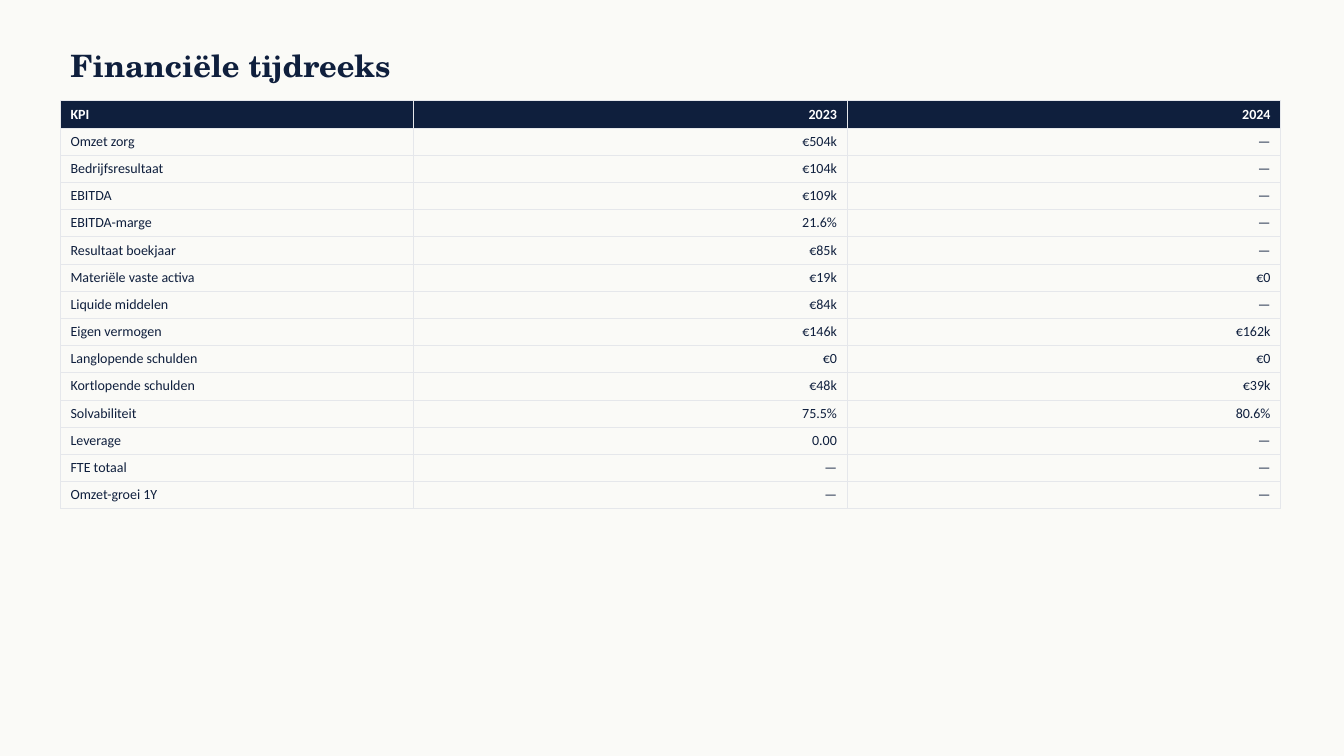
from dataclasses import dataclass

from lxml import etree
from pptx import Presentation
from pptx.dml.color import RGBColor
from pptx.enum.text import MSO_ANCHOR, PP_ALIGN
from pptx.oxml.ns import qn
from pptx.util import Inches, Pt

LEFT, RIGHT = PP_ALIGN.LEFT, PP_ALIGN.RIGHT
MIDDLE = MSO_ANCHOR.MIDDLE


@dataclass(frozen=True)
class Theme:
    paper: str = "FAFAF7"
    navy: str = "0F1F3D"
    white: str = "FFFFFF"
    rule: str = "E5E7EB"
    title_font: str = "TeX Gyre Schola"
    body_font: str = "Calibri"
    title_size: float = 22
    body_size: float = 10
    rule_width: float = 0.5


THEME = Theme()
COLUMN_WIDTHS = (3.5, 4.3, 4.3)
ROW_HEIGHT = 0.27
KPI_ROWS = (
    ("KPI", "2023", "2024"),
    ("Omzet zorg", "€504k", "—"),
    ("Bedrijfsresultaat", "€104k", "—"),
    ("EBITDA", "€109k", "—"),
    ("EBITDA-marge", "21.6%", "—"),
    ("Resultaat boekjaar", "€85k", "—"),
    ("Materiële vaste activa", "€19k", "€0"),
    ("Liquide middelen", "€84k", "—"),
    ("Eigen vermogen", "€146k", "€162k"),
    ("Langlopende schulden", "€0", "€0"),
    ("Kortlopende schulden", "€48k", "€39k"),
    ("Solvabiliteit", "75.5%", "80.6%"),
    ("Leverage", "0.00", "—"),
    ("FTE totaal", "—", "—"),
    ("Omzet-groei 1Y", "—", "—"),
)


def write_text(frame, text, *, font=THEME.body_font, size=THEME.body_size,
               color=THEME.navy, bold=False, align=LEFT):
    para = frame.paragraphs[0]
    para.alignment = align
    span = para.add_run()
    span.text = text
    span.font.name = font
    span.font.size = Pt(size)
    span.font.bold = bold
    span.font.color.rgb = RGBColor.from_string(color)


def add_title(page, text):
    box = page.shapes.add_textbox(Inches(0.6), Inches(0.4), Inches(12), Inches(0.5))
    frame = box.text_frame
    frame.word_wrap = True
    frame.vertical_anchor = MIDDLE
    write_text(frame, text, font=THEME.title_font, size=THEME.title_size, bold=True)


def set_borders(cell):
    properties = cell._tc.get_or_add_tcPr()
    for position, side in enumerate(("lnL", "lnR", "lnT", "lnB")):
        line = etree.Element(qn(f"a:{side}"), w=str(Pt(THEME.rule_width)))
        fill = etree.SubElement(line, qn("a:solidFill"))
        etree.SubElement(fill, qn("a:srgbClr"), val=THEME.rule)
        properties.insert(position, line)


def format_cell(cell, text, *, header, align):
    if header:
        cell.fill.solid()
        cell.fill.fore_color.rgb = RGBColor.from_string(THEME.navy)
    else:
        cell.fill.background()
    set_borders(cell)
    color = THEME.white if header else THEME.navy
    write_text(cell.text_frame, text, color=color, bold=header, align=align)


def add_kpi_table(page, rows):
    table = page.shapes.add_table(
        len(rows), len(COLUMN_WIDTHS), Inches(0.6), Inches(1),
        Inches(sum(COLUMN_WIDTHS)), Inches(ROW_HEIGHT * len(rows))).table
    table.first_row = True
    table.horz_banding = False
    for column, width in zip(table.columns, COLUMN_WIDTHS):
        column.width = Inches(width)
    for row_index, values in enumerate(rows):
        table.rows[row_index].height = Inches(ROW_HEIGHT)
        for column_index, value in enumerate(values):
            format_cell(table.cell(row_index, column_index), value,
                        header=row_index == 0,
                        align=RIGHT if column_index else LEFT)


def main():
    deck = Presentation()
    deck.slide_width = Inches(13.33)
    deck.slide_height = Inches(7.5)
    page = deck.slides.add_slide(deck.slide_layouts[6])
    page.background.fill.solid()
    page.background.fill.fore_color.rgb = RGBColor.from_string(THEME.paper)
    add_title(page, "Financiële tijdreeks")
    add_kpi_table(page, KPI_ROWS)
    deck.save("out.pptx")


if __name__ == "__main__":
    main()
